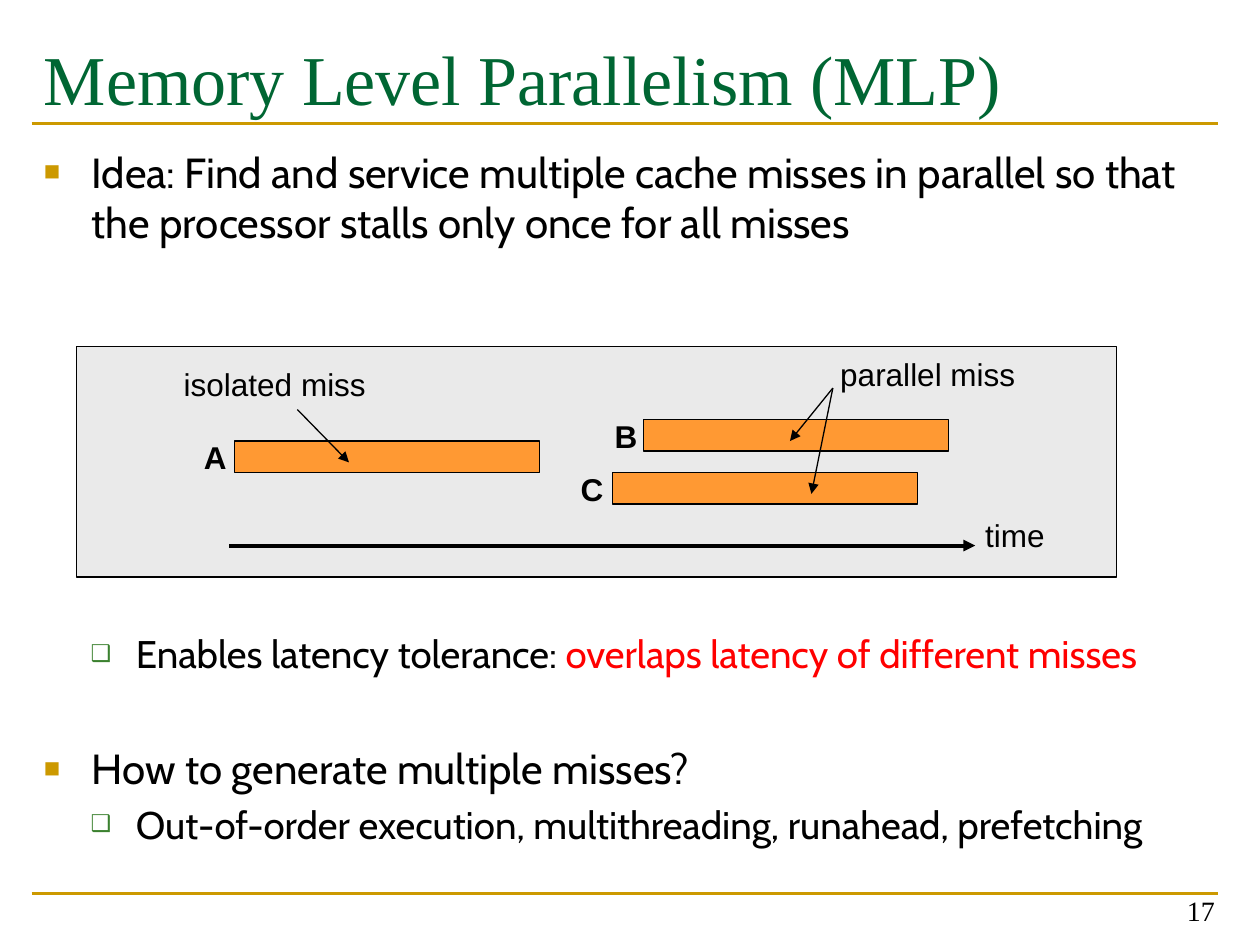
from lxml import etree
from pptx import Presentation
from pptx import util as u
from pptx.dml.color import RGBColor
from pptx.enum import shapes, text
from pptx.oxml.ns import qn

BLACK = RGBColor(0, 0, 0)
GREEN = RGBColor(0x00, 0x66, 0x33)
GOLD = RGBColor(0xCC, 0x99, 0x00)
LEAF = RGBColor(0x3B, 0x81, 0x2F)
RED = RGBColor(0xFF, 0, 0)
GREY = RGBColor(0xEA, 0xEA, 0xEA)
ORANGE = RGBColor(0xFF, 0x99, 0x33)

SERIF, SANS, BODY = "Times New Roman", "Arial", "Cabin"

# text size, left margin, hanging indent, bullet sign, bullet colour, bullet percent
LEVELS = [
    (24, 0.38, 0.38, "■", GOLD, 65),
    (22, 0.73, 0.36, "❑", LEAF, 60),
]

# level, space before in points, coloured runs
POINTS = [
    (0, 0, [("Idea: Find and service multiple cache misses in parallel "
             "so that the processor stalls only once for all misses", BLACK)]),
    (1, 219, [("Enables latency tolerance: ", BLACK),
              ("overlaps latency of different misses", RED)]),
    (0, 38, [("How to generate multiple misses?", BLACK)]),
    (1, 4.4, [("Out-of-order execution, multithreading, runahead, "
               "prefetching", BLACK)]),
]

# name, bar left, bar top, label left
MISSES = [("A", 1.86, 3.5, 1.52), ("B", 5.11, 3.33, 4.78), ("C", 4.86, 3.75, 4.51)]


class Sketch:
    def __init__(self, slide):
        self.slide = slide

    def font(self, run, face, size, color, bold=False):
        run.font.name = face
        run.font.size = u.Pt(size)
        run.font.color.rgb = color
        run.font.bold = bold

    def frame(self, x, y, w, h):
        box = self.slide.shapes.add_textbox(*map(u.Inches, (x, y, w, h)))
        box.text_frame.word_wrap = True
        return box.text_frame

    def label(self, words, x, y, w, h, face=SANS, size=18, color=BLACK, bold=False):
        frame = self.frame(x, y, w, h)
        frame.text = words
        self.font(frame.paragraphs[0].runs[0], face, size, color, bold)
        return frame

    def rect(self, x, y, w, h, fill):
        box = self.slide.shapes.add_shape(
            shapes.MSO_SHAPE.RECTANGLE, *map(u.Inches, (x, y, w, h)))
        box.shadow.inherit = False
        box.fill.solid()
        box.fill.fore_color.rgb = fill
        box.line.color.rgb = BLACK
        box.line.width = u.Pt(0.75)

    def line(self, start, end, color=BLACK, width=0.75, arrow=True):
        link = self.slide.shapes.add_connector(
            shapes.MSO_CONNECTOR.STRAIGHT, *map(u.Inches, start + end))
        link.line.color.rgb = color
        link.line.width = u.Pt(width)
        props = link._element.spPr
        if arrow:
            etree.SubElement(props.find(qn("a:ln")), qn("a:tailEnd"), type="triangle")
        etree.SubElement(props, qn("a:effectLst"))

    def bullet(self, para, level):
        """Give the paragraph the indent and the sign of its level."""
        size, left, hang, sign, color, scale = LEVELS[level]
        props = para._p.get_or_add_pPr()
        props.set("marL", str(u.Inches(left)))
        props.set("indent", str(-u.Inches(hang)))
        tint = etree.SubElement(props, qn("a:buClr"))
        etree.SubElement(tint, qn("a:srgbClr"), val=str(color))
        etree.SubElement(props, qn("a:buSzPct"), val=str(scale * 1000))
        etree.SubElement(props, qn("a:buFont"), typeface=SANS)
        etree.SubElement(props, qn("a:buChar"), char=sign)

    def points(self, items, x, y, w, h):
        frame = self.frame(x, y, w, h)
        for i, (level, gap, parts) in enumerate(items):
            para = frame.add_paragraph() if i else frame.paragraphs[0]
            para.level = level
            para.space_before = u.Pt(gap)
            self.bullet(para, level)
            for words, color in parts:
                run = para.add_run()
                run.text = words
                self.font(run, BODY, LEVELS[level][0], color)


def main():
    deck = Presentation()
    deck.slide_width, deck.slide_height = u.Inches(10), u.Inches(7.5)
    art = Sketch(deck.slides.add_slide(deck.slide_layouts[6]))

    for y in (0.98, 7.09):
        art.line((0.25, y), (9.67, y), GOLD, 1.5, arrow=False)
    art.label("Memory Level Parallelism (MLP)", 0.25, 0.23, 9.42, 0.75,
              SERIF, 40, GREEN)
    art.points(POINTS, 0.25, 1.11, 9.42, 5.68)
    page = art.label("17", 7.41, 6.91, 2.33, 0.5, SERIF, 16)
    page.vertical_anchor = text.MSO_ANCHOR.BOTTOM
    page.paragraphs[0].alignment = text.PP_ALIGN.RIGHT

    art.rect(0.61, 2.75, 8.25, 1.83, GREY)
    for name, x, y, left in MISSES:
        art.rect(x, y, 2.42, 0.25, ORANGE)
        art.label(name, left, y - 0.07, 0.67, 0.4, bold=True)
    art.line((1.82, 4.33), (7.74, 4.33), width=2.25)
    art.label("time", 7.72, 4.05, 0.92, 0.5)

    art.label("isolated miss", 1.36, 2.85, 2.25, 0.5)
    art.line((2.36, 3.25), (2.77, 3.67))
    art.label("parallel miss", 6.57, 2.77, 2.08, 0.5)
    for end in ((6.27, 3.5), (6.44, 3.92)):
        art.line((6.61, 3.08), end)

    deck.save("out.pptx")


if __name__ == "__main__":
    main()
